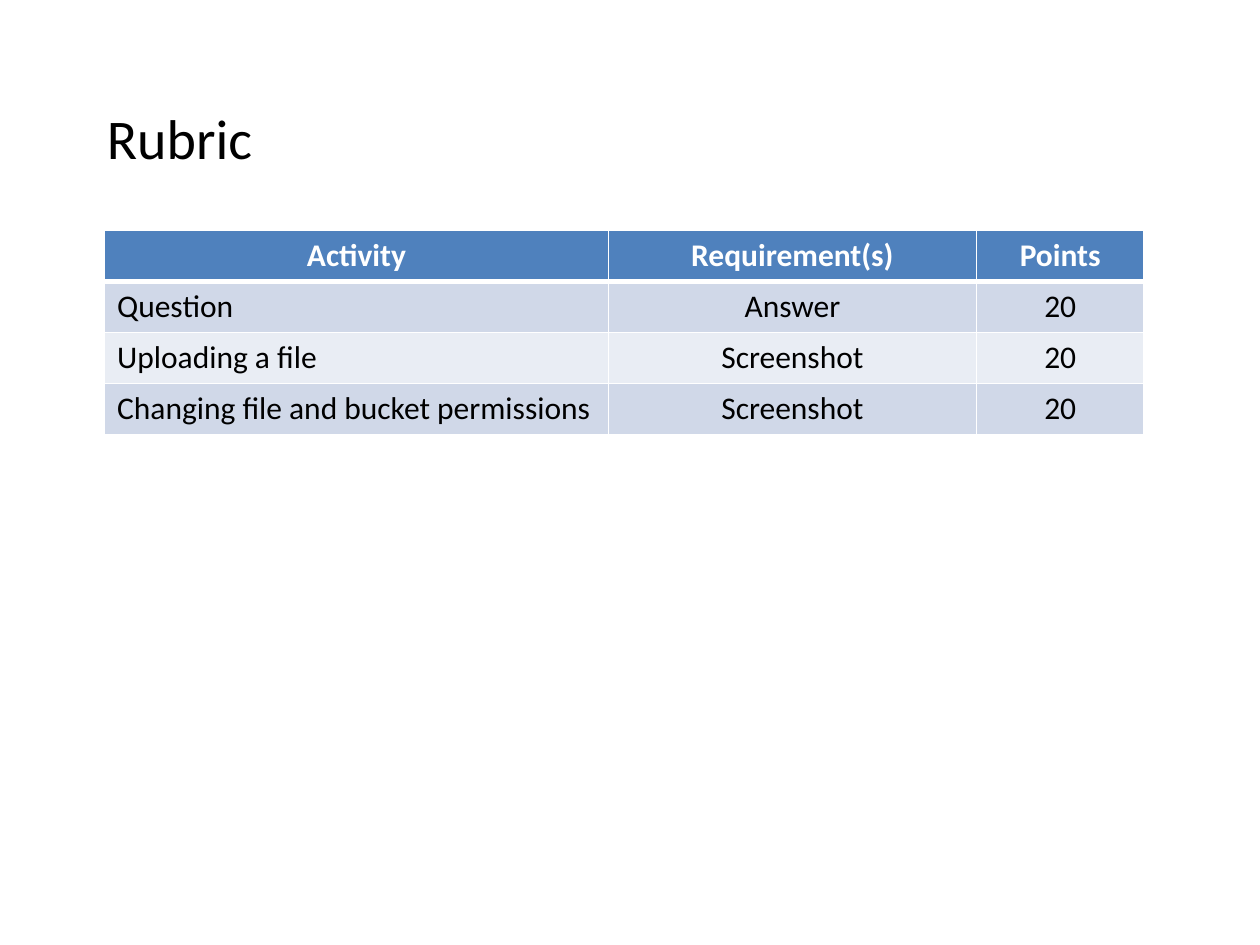
"""Build a rubric slide with a heading and a table of activities and points."""
import pptx
import pptx.dml.color
import pptx.enum.text
import pptx.oxml
import pptx.oxml.ns
import pptx.util

Inches = pptx.util.Inches
Pt = pptx.util.Pt
ALIGN = pptx.enum.text.PP_ALIGN


def color(value):
    return pptx.dml.color.RGBColor.from_string(value)


def set_borders(cell, widths):
    properties = cell._tc.get_or_add_tcPr()
    for position, (side, width) in enumerate(widths.items()):
        properties.insert(position, pptx.oxml.parse_xml(
            f'<a:ln{side} {pptx.oxml.ns.nsdecls("a")} w="{Pt(width)}">'
            f'<a:solidFill><a:srgbClr val="FFFFFF"/></a:solidFill></a:ln{side}>'))


presentation = pptx.Presentation()
presentation.slide_width = Inches(10)
presentation.slide_height = Inches(7.5)
slide = presentation.slides.add_slide(presentation.slide_layouts[6])

heading = slide.shapes.add_textbox(Inches(0.75), Inches(0.77), Inches(9), Inches(0.7))
heading.text_frame.word_wrap = True
paragraph = heading.text_frame.paragraphs[0]
paragraph.text = "Rubric"
paragraph.font.name = "Calibri"
paragraph.font.size = Pt(32)
paragraph.font.color.rgb = color("000000")

rows = [
    ("Activity", "Requirement(s)", "Points"),
    ("Question", "Answer", "20"),
    ("Uploading a file", "Screenshot", "20"),
    ("Changing file and bucket permissions", "Screenshot", "20"),
]
column_widths = [4, 2.92, 1.33]
band_fills = ["E9EDF4", "D0D8E8"]

table = slide.shapes.add_table(
    len(rows), len(column_widths),
    Inches(0.83), Inches(1.83), Inches(8.25), Inches(1.62)).table
for column, width in zip(table.columns, column_widths):
    column.width = Inches(width)

for row_index, texts in enumerate(rows):
    is_header = row_index == 0
    for column_index, text in enumerate(texts):
        cell = table.cell(row_index, column_index)
        cell.fill.solid()
        cell.fill.fore_color.rgb = color("4F81BD" if is_header else band_fills[row_index % 2])
        set_borders(cell, {"L": 1, "R": 1, "T": 3 if row_index == 1 else 1,
                           "B": 3 if is_header else 1})
        paragraph = cell.text_frame.paragraphs[0]
        paragraph.text = text
        paragraph.alignment = ALIGN.CENTER if is_header or column_index else ALIGN.LEFT
        paragraph.font.name = "Calibri"
        paragraph.font.size = Pt(18)
        paragraph.font.bold = is_header
        paragraph.font.color.rgb = color("FFFFFF" if is_header else "000000")

presentation.save("out.pptx")
